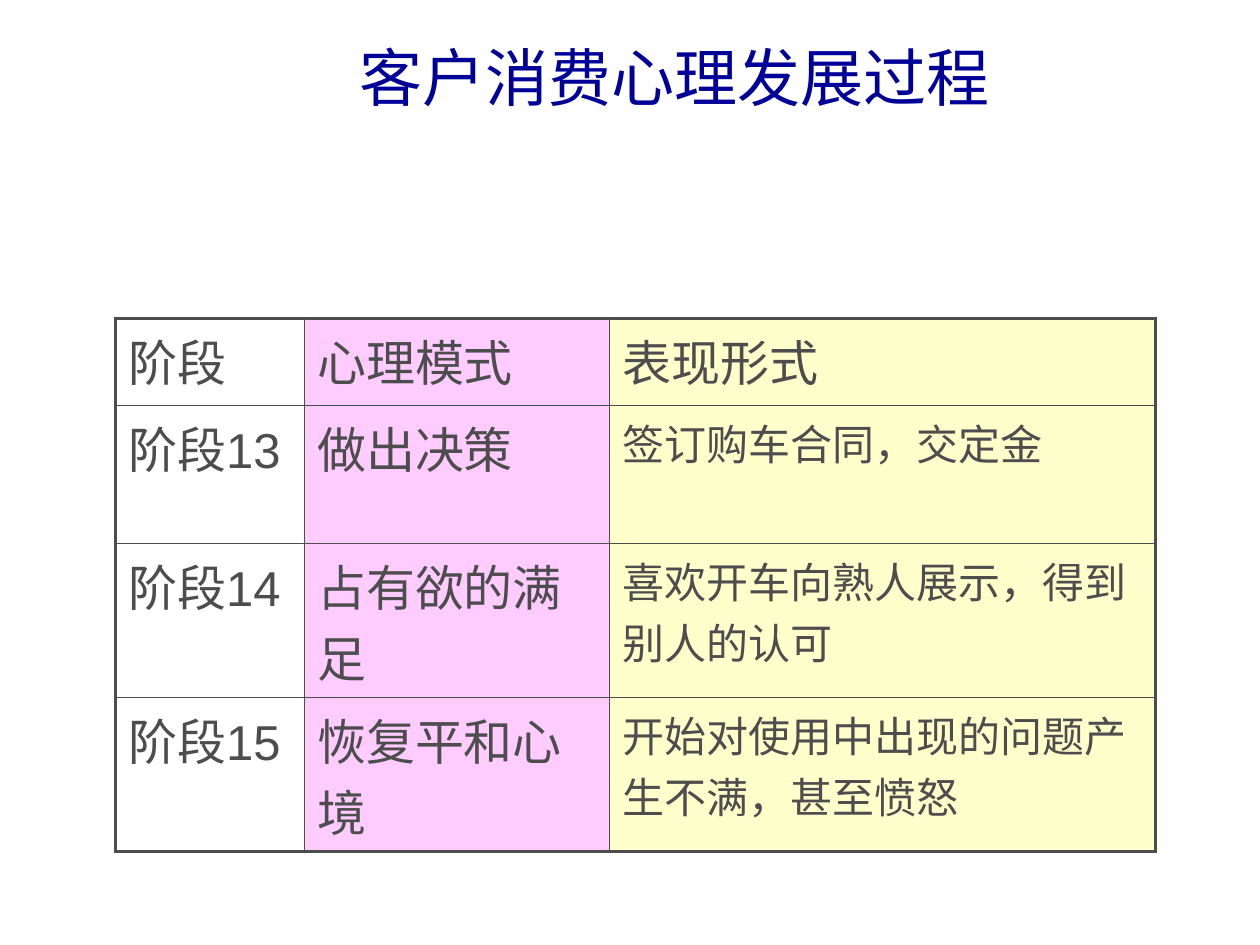
from lxml import etree
from pptx import Presentation
from pptx import util as u
from pptx.dml.color import RGBColor
from pptx.enum import text
from pptx.oxml.ns import qn

GREY, NAVY, PINK, CREAM = "4D4D4D", "000099", "FFCCFF", "FFFFCC"
THICK, THIN = 2.25, 1
COLUMN_WIDTHS = (3.81, 6.15, 11)
ROW_HEIGHTS = (1.75, 2.39, 2.87, 2.87)
COLUMN_FILLS = (None, PINK, CREAM)
STAGES = (
    ("阶段", "心理模式", "表现形式"),
    ("阶段13", "做出决策", "签订购车合同，交定金"),
    ("阶段14", "占有欲的满足", "喜欢开车向熟人展示，得到别人的认可"),
    ("阶段15", "恢复平和心境", "开始对使用中出现的问题产生不满，甚至愤怒"),
)


def colour(value):
    return RGBColor.from_string(value)


def add_span(para, words, size, ink):
    span = para.add_run()
    span.text = words
    span.font.size = u.Pt(size)
    span.font.name = "Arial"
    span.font.color.rgb = colour(ink)


def set_borders(cell, widths):
    """Draw left, right, top and bottom lines, which must precede the fill."""
    properties = cell._tc.get_or_add_tcPr()
    for side, width in zip(("lnL", "lnR", "lnT", "lnB"), widths):
        line = etree.SubElement(properties, qn(f"a:{side}"), w=str(u.Pt(width)))
        fill = etree.SubElement(line, qn("a:solidFill"))
        etree.SubElement(fill, qn("a:srgbClr"), val=GREY)


def add_title(page, left, top, width, height):
    box = page.shapes.add_textbox(left, top, width, height)
    frame = box.text_frame
    frame.word_wrap = True
    frame.vertical_anchor = text.MSO_ANCHOR.MIDDLE
    add_span(frame.paragraphs[0], "客户消费心理发展过程", 36, NAVY)


def fill_cell(cell, row, column):
    last_row, last_column = len(STAGES) - 1, len(COLUMN_WIDTHS) - 1
    outer = (column == 0, column == last_column, row == 0, row == last_row)
    set_borders(cell, [THICK if edge else THIN for edge in outer])
    if COLUMN_FILLS[column]:
        cell.fill.solid()
        cell.fill.fore_color.rgb = colour(COLUMN_FILLS[column])
    else:
        cell.fill.background()
    size = 24 if row and column == last_column else 28
    add_span(cell.text_frame.paragraphs[0], STAGES[row][column], size, GREY)


def add_stage_table(page, left, top):
    table = page.shapes.add_table(
        len(STAGES), len(COLUMN_WIDTHS), left, top,
        u.Cm(sum(COLUMN_WIDTHS)), u.Cm(sum(ROW_HEIGHTS))).table
    table.first_row = table.horz_banding = False
    for column, width in zip(table.columns, COLUMN_WIDTHS):
        column.width = u.Cm(width)
    for row, height in enumerate(ROW_HEIGHTS):
        table.rows[row].height = u.Cm(height)
        for column in range(len(COLUMN_WIDTHS)):
            fill_cell(table.cell(row, column), row, column)


def main():
    deck = Presentation()
    deck.slide_width, deck.slide_height = u.Cm(25.4), u.Cm(19.05)
    page = deck.slides.add_slide(deck.slide_layouts[6])
    add_stage_table(page, u.Cm(2.33), u.Cm(6.42))
    add_title(page, u.Cm(6.99), u.Cm(0.76), u.Cm(18.41), u.Cm(1.57))
    deck.save("out.pptx")


if __name__ == "__main__":
    main()
